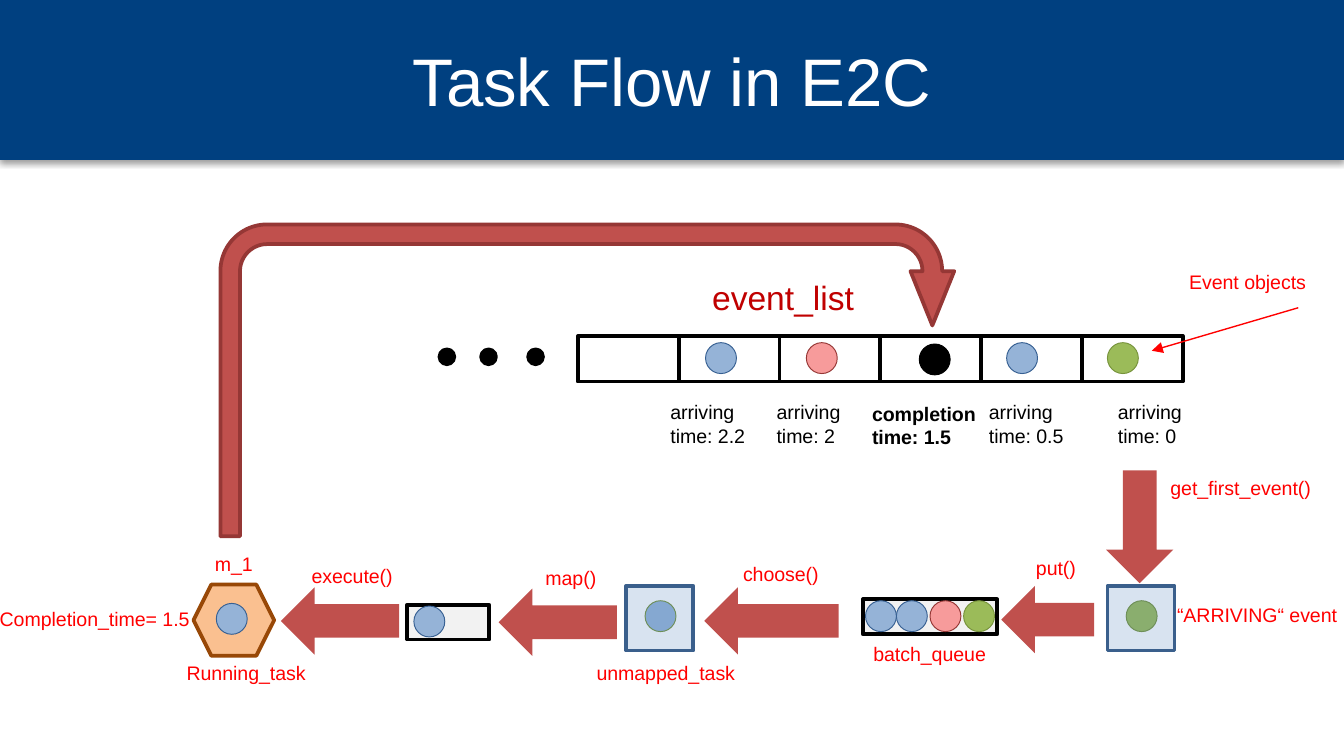
from dataclasses import dataclass

from lxml import etree
from pptx import Presentation
from pptx.dml.color import RGBColor
from pptx.enum.shapes import MSO_CONNECTOR, MSO_SHAPE
from pptx.enum.text import MSO_ANCHOR, MSO_AUTO_SIZE, PP_ALIGN
from pptx.oxml.ns import qn
from pptx.util import Inches, Pt

RECTANGLE = MSO_SHAPE.RECTANGLE
OVAL = MSO_SHAPE.OVAL
HEXAGON = MSO_SHAPE.HEXAGON
RIGHT_ARROW = MSO_SHAPE.RIGHT_ARROW
U_TURN_ARROW = MSO_SHAPE.U_TURN_ARROW
STRAIGHT = MSO_CONNECTOR.STRAIGHT
LEFT, CENTER = PP_ALIGN.LEFT, PP_ALIGN.CENTER
TOP, MIDDLE = MSO_ANCHOR.TOP, MSO_ANCHOR.MIDDLE
GROW = MSO_AUTO_SIZE.SHAPE_TO_FIT_TEXT


@dataclass(frozen=True)
class Theme:
    font: str = "Arial"
    title_size: float = 36
    heading_size: float = 18
    label_size: float = 10.5
    outline: float = 2
    thin: float = 0.5
    pointer: float = 0.75
    black: str = "000000"
    white: str = "FFFFFF"
    navy: str = "004080"
    red: str = "FF0000"
    dark_red: str = "C00000"
    arrow: str = "C0504D"
    arrow_edge: str = "953735"
    queue: str = "F2F2F2"
    frame: str = "4F81BD"
    frame_edge: str = "3A5F8C"
    machine: str = "FAC090"
    machine_edge: str = "984807"
    blue: tuple = ("95B3D7", "376092")
    pink: tuple = ("F79B9B", "953735")
    green: tuple = ("9BBB59", "77933C")
    unmapped: tuple = ("95B3D7", "77933C")
    complete: tuple = ("000000", "000000")


THEME = Theme()


def write_text(frame, text, size=THEME.label_size, color=THEME.red,
               bold=False, align=LEFT, anchor=TOP):
    frame.word_wrap = True
    frame.vertical_anchor = anchor
    for index, line in enumerate(text.split("\n")):
        paragraph = frame.paragraphs[0] if index == 0 else frame.add_paragraph()
        paragraph.alignment = align
        run = paragraph.add_run()
        run.text = line
        run.font.name = THEME.font
        run.font.size = Pt(size)
        run.font.bold = bold
        run.font.color.rgb = RGBColor.from_string(color)


class Canvas:
    def __init__(self, slide, theme):
        self.slide = slide
        self.theme = theme

    def shape(self, kind, left, top, width, height, fill, line=None,
              weight=THEME.outline, rotation=0, opacity=None, group=None):
        shape = (group or self.slide).shapes.add_shape(
            kind, Inches(left), Inches(top), Inches(width), Inches(height))
        shape.shadow.inherit = False
        shape.rotation = rotation
        shape.fill.solid()
        shape.fill.fore_color.rgb = RGBColor.from_string(fill)
        if opacity is not None:
            color = shape.fill._xPr.find(qn("a:solidFill"))[0]
            etree.SubElement(color, qn("a:alpha"), val=str(opacity * 1000))
        if line:
            shape.line.color.rgb = RGBColor.from_string(line)
            shape.line.width = Pt(weight)
        else:
            shape.line.fill.background()
        return shape

    def banner(self, height):
        shape = self.shape(RECTANGLE, 0, 0, 10, height, self.theme.navy)
        effects = shape._element.spPr.find(qn("a:effectLst"))
        shadow = etree.SubElement(effects, qn("a:outerShdw"), blurRad=str(Pt(3.1)),
                                  dist=str(Pt(1.6)), dir="5400000", rotWithShape="0")
        color = etree.SubElement(shadow, qn("a:srgbClr"), val=self.theme.black)
        etree.SubElement(color, qn("a:alpha"), val="38000")

    def text(self, text, left, top, width, height=0.28, grow=True, **style):
        box = self.slide.shapes.add_textbox(
            Inches(left), Inches(top), Inches(width), Inches(height))
        write_text(box.text_frame, text, **style)
        if grow:
            box.text_frame.auto_size = GROW

    def task(self, left, top, colors, group=None):
        fill, line = colors
        self.shape(OVAL, left, top, 0.23, 0.23, fill, line, self.theme.thin, group=group)

    def task_frame(self, left, group=None):
        self.shape(RECTANGLE, left, 4.36, 0.5, 0.48, self.theme.frame,
                   self.theme.frame_edge, opacity=22, group=group)

    def queue(self, left, top, width):
        self.shape(RECTANGLE, left, top, width, 0.26, self.theme.queue, self.theme.black)

    def block_arrow(self, left, top, length, rotation=180):
        self.shape(RIGHT_ARROW, left, top, length, 0.5, self.theme.arrow, rotation=rotation)

    def pointer(self, start, end):
        line = self.slide.shapes.add_connector(
            STRAIGHT, *(Inches(value) for value in start + end))
        line.line.color.rgb = RGBColor.from_string(self.theme.red)
        line.line.width = Pt(self.theme.pointer)
        etree.SubElement(line.line._get_or_add_ln(), qn("a:tailEnd"), type="triangle")
        etree.SubElement(line._element.spPr, qn("a:effectLst"))


def draw_event_list(canvas):
    theme = canvas.theme
    # Cells and continuation dots
    group = canvas.slide.shapes.add_group_shape()
    for index in range(5, -1, -1):
        canvas.shape(RECTANGLE, 4.3 + 0.75 * index, 2.5, 0.75, 0.34,
                     theme.white, theme.black, group=group)
    for left in (3.93, 3.58, 3.27):
        canvas.shape(OVAL, left, 2.6, 0.11, 0.11, theme.black, theme.black, group=group)
    canvas.text("event_list", 5.2, 2.01, 1.59, 0.4,
                size=theme.heading_size, color=theme.dark_red)

    # Events and their times
    for left, colors in ((8.24, theme.green), (7.49, theme.blue),
                         (6, theme.pink), (5.25, theme.blue)):
        canvas.task(left, 2.55, colors)
    for time, left, width in (("0", 8.22, 1.16), ("0.5", 7.26, 0.96),
                              ("2", 5.68, 1.16), ("2.2", 4.89, 1.16)):
        canvas.text(f"arriving\ntime: {time}", left, 2.93, width, 0.45, color=theme.black)
    canvas.pointer((9.66, 2.29), (8.57, 2.61))
    canvas.text("Event objects", 8.75, 1.96, 1.16)


def draw_task_path(canvas):
    theme = canvas.theme
    # Arriving event
    canvas.block_arrow(8.06, 3.67, 0.84, rotation=90)
    group = canvas.slide.shapes.add_group_shape()
    canvas.task(8.38, 4.47, theme.green, group)
    canvas.task_frame(8.24, group)

    # Batch queue
    canvas.block_arrow(7.45, 4.36, 0.69)
    canvas.queue(6.42, 4.46, 1)
    for left, colors in ((7.17, theme.green), (6.92, theme.pink),
                         (6.67, theme.blue), (6.44, theme.blue)):
        canvas.task(left, 4.47, colors)

    # Unmapped task
    canvas.block_arrow(5.24, 4.37, 1)
    canvas.task(4.8, 4.47, theme.unmapped)
    canvas.task_frame(4.66)

    # Machine queue
    canvas.block_arrow(3.71, 4.38, 0.88)
    canvas.queue(3.03, 4.5, 0.61)
    canvas.task(3.08, 4.51, theme.blue)

    # Machine with its running task
    canvas.block_arrow(2.09, 4.37, 0.88)
    canvas.shape(HEXAGON, 1.44, 4.35, 0.6, 0.53, theme.machine, theme.machine_edge)
    canvas.task(1.61, 4.49, theme.blue)
    canvas.text("m_1", 1.49, 4.06, 0.5, align=CENTER)

    # Step and stage labels
    for label, left, top, width in (
            ("get_first_event()", 8.61, 3.49, 1.52),
            ("“ARRIVING“ event", 8.66, 4.44, 1.44),
            ("put()", 7.61, 4.09, 0.52),
            ("batch_queue", 6.4, 4.73, 1.16),
            ("choose()", 5.43, 4.13, 0.92),
            ("unmapped_task", 4.34, 4.87, 1.28),
            ("map()", 3.96, 4.16, 0.61),
            ("execute()", 2.22, 4.15, 0.82),
            ("Running_task", 1.29, 4.87, 1.21),
            ("Completion_time= 1.5", -0.1, 4.47, 1.63)):
        canvas.text(label, left, top, width)


def draw_completion(canvas):
    theme = canvas.theme
    arrow = canvas.shape(U_TURN_ARROW, 1.64, 1.67, 5.46, 2.32, theme.arrow, theme.arrow_edge)
    for index, value in enumerate((0.063, 0.07, 0.174, 0.315, 0.324)):
        arrow.adjustments[index] = value
    canvas.task(6.84, 2.56, theme.complete)
    canvas.text("completion\ntime: 1.5", 6.39, 2.94, 1.16, 0.45,
                color=theme.black, bold=True)


def main():
    presentation = Presentation()
    # Widescreen, 16:9
    presentation.slide_width = Inches(10)
    presentation.slide_height = Inches(10) * 9 // 16
    slide = presentation.slides.add_slide(presentation.slide_layouts[6])
    canvas = Canvas(slide, THEME)

    # Title banner
    canvas.banner(1.19)
    canvas.text("Task Flow in E2C", 0.5, 0.12, 9, 0.94, grow=False, size=THEME.title_size,
                color=THEME.white, align=CENTER, anchor=MIDDLE)

    draw_event_list(canvas)
    draw_task_path(canvas)
    draw_completion(canvas)
    presentation.save("out.pptx")


if __name__ == "__main__":
    main()
